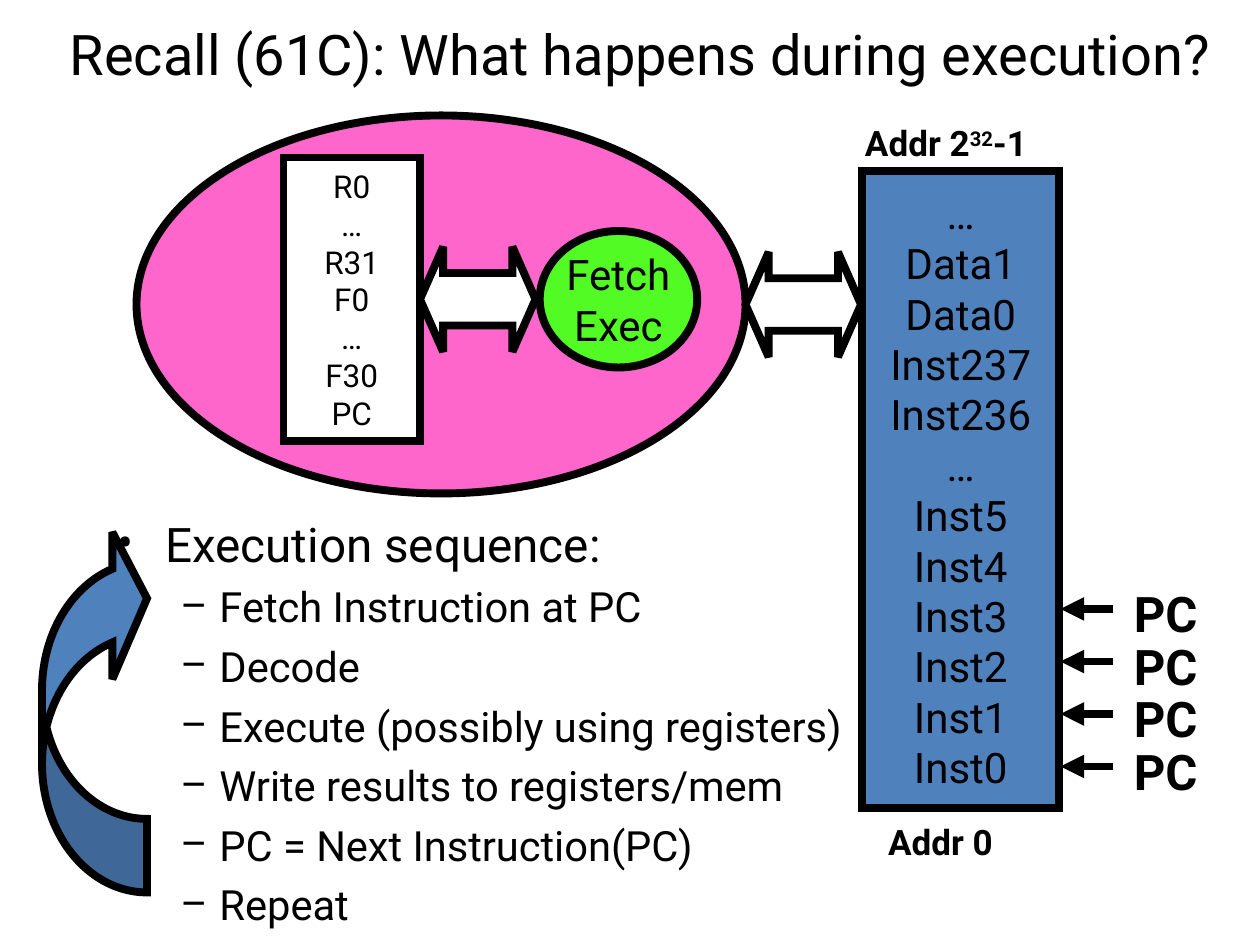
from pptx import Presentation, util as u
from pptx.dml.color import RGBColor
from pptx.enum import shapes, text
from pptx.oxml import ns, xmlchemy

BLACK = RGBColor(0x00, 0x00, 0x00)
WHITE = RGBColor(0xFF, 0xFF, 0xFF)
PINK = RGBColor(0xFF, 0x66, 0xCC)
GREEN = RGBColor(0x53, 0xFB, 0x25)
BLUE = RGBColor(0x4F, 0x81, 0xBD)
FONT = "Roboto"
STROKE = u.Pt(4.5)
COLUMNS, ROWS = 120, 90
KIND = shapes.MSO_SHAPE


class Sketch:
    """Draws styled elements on one page, placed by grid columns and rows."""

    def __init__(self, deck):
        self.page = deck.slides.add_slide(deck.slide_layouts[6])
        self.column = deck.slide_width / COLUMNS
        self.row = deck.slide_height / ROWS

    def place(self, left, top, width, height):
        return [round(value * unit) for value, unit in
                zip((left, top, width, height), (self.column, self.row) * 2)]

    def child(self, parent, tag, **attributes):
        node = xmlchemy.OxmlElement(tag)
        for name, value in attributes.items():
            node.set(name, str(value))
        parent.append(node)

    def fill_text(self, box, words, size, bold=False, align=None, wrap=False):
        frame = box.text_frame
        frame.text = words
        frame.word_wrap = wrap
        for para in frame.paragraphs:
            para.alignment = align
            for span in para.runs:
                self.style(span, size, bold)

    def style(self, span, size, bold=False):
        span.font.name = FONT
        span.font.size = u.Pt(size)
        span.font.bold = bold
        span.font.color.rgb = BLACK

    def shape(self, kind, area, fill, words="", size=24, adjust=(), turn=0, flip=False):
        box = self.page.shapes.add_shape(kind, *self.place(*area))
        box.shadow.inherit = False
        box.fill.solid()
        box.fill.fore_color.rgb = fill
        box.line.color.rgb = BLACK
        box.line.width = STROKE
        self.child(box.line._get_or_add_ln(), "a:miter", lim=800000)
        for index, value in enumerate(adjust):
            box.adjustments[index] = value
        box.rotation = turn
        if flip:
            box._element.spPr.find(ns.qn("a:xfrm")).set("flipV", "1")
        if words:
            box.text_frame.vertical_anchor = text.MSO_ANCHOR.MIDDLE
            self.fill_text(box, words, size, align=text.PP_ALIGN.CENTER)

    def double_arrow(self, left, top):
        self.shape(KIND.LEFT_RIGHT_ARROW, (left, top, 11, 10), WHITE,
                   adjust=(0.5, 0.22), turn=180)

    def label(self, area, words, size):
        box = self.page.shapes.add_textbox(*self.place(*area))
        self.fill_text(box, words, size, bold=True)
        box.text_frame.auto_size = text.MSO_AUTO_SIZE.SHAPE_TO_FIT_TEXT
        return box.text_frame.paragraphs[0]

    def power_label(self, area, base, power, rest, size):
        para = self.label(area, base, size)
        for words, lift in ((power, 30000), (rest, 0)):
            span = para.add_run()
            span.text = words
            self.style(span, size, bold=True)
            span.font._element.set("baseline", str(lift))

    def title(self, area, words, size):
        box = self.page.shapes.add_textbox(*self.place(*area))
        box.text_frame.vertical_anchor = text.MSO_ANCHOR.MIDDLE
        self.fill_text(box, words, size, align=text.PP_ALIGN.CENTER, wrap=True)

    def outline(self, area, heading, steps):
        box = self.page.shapes.add_textbox(*self.place(*area))
        self.fill_text(box, "\n".join([heading, *steps]), 23.8, wrap=True)
        for index, para in enumerate(box.text_frame.paragraphs):
            mark, indent, hang = ("–", 0.81, 0.31) if index else ("•", 0.38, 0.38)
            para.level = min(index, 1)
            para.space_before = u.Pt(5.5)
            props = para._p.get_or_add_pPr()
            props.set("marL", str(u.Inches(indent)))
            props.set("indent", str(-u.Inches(hang)))
            self.child(props, "a:buFont", typeface=FONT)
            self.child(props, "a:buChar", char=mark)
        box.text_frame.paragraphs[0].runs[0].font.size = u.Pt(27.2)

    def arrow(self, start, end, row):
        begin_x, begin_y, end_x, end_y = self.place(start, row, end, row)
        line = self.page.shapes.add_connector(
            shapes.MSO_CONNECTOR.STRAIGHT, begin_x, begin_y, end_x, end_y)
        line.line.color.rgb = BLACK
        line.line.width = STROKE
        self.child(line.line._get_or_add_ln(), "a:tailEnd", type="triangle")
        self.child(line._element.spPr, "a:effectLst")


def main():
    deck = Presentation()
    deck.slide_width, deck.slide_height = u.Inches(10), u.Inches(7.5)
    sketch = Sketch(deck)

    sketch.shape(KIND.OVAL, (13, 11, 58, 36), PINK)
    sketch.shape(KIND.OVAL, (51.4, 22, 15, 13), GREEN, "Fetch\nExec")
    sketch.double_arrow(40, 23.5)
    sketch.shape(KIND.RECTANGLE, (27, 15, 13, 27), WHITE,
                 "R0\n…\nR31\nF0\n…\nF30\nPC", size=18)
    sketch.double_arrow(71, 24)
    sketch.shape(KIND.RECTANGLE, (82.1, 16.3, 18.8, 60.7), BLUE,
                 "…\nData1\nData0\nInst237\nInst236\n…\n"
                 "Inst5\nInst4\nInst3\nInst2\vInst1\nInst0")
    sketch.label((83.4, 77.6, 13.1, 5.3), "Addr 0", 20)
    sketch.power_label((81.2, 11, 18.6, 5.3), "Addr 2", "32", "-1", 20)

    sketch.title((0, 1.6, 122, 7), "Recall (61C): What happens during execution?", 32)
    sketch.outline((10, 48.4, 75, 39), "Execution sequence:", [
        "Fetch Instruction at PC",
        "Decode",
        "Execute (possibly using registers)",
        "Write results to registers/mem",
        "PC = Next Instruction(PC)",
        "Repeat",
    ])

    for row in range(73, 57, -5):
        sketch.label((106.8, row - 3, 9, 6.8), "PC", 28)
        sketch.arrow(106, 101, row)
    sketch.shape(KIND.CURVED_RIGHT_ARROW, (4, 50, 10, 35), BLUE,
                 adjust=(0.7, 1.4, 0.33), flip=True)

    deck.save("out.pptx")


if __name__ == "__main__":
    main()
